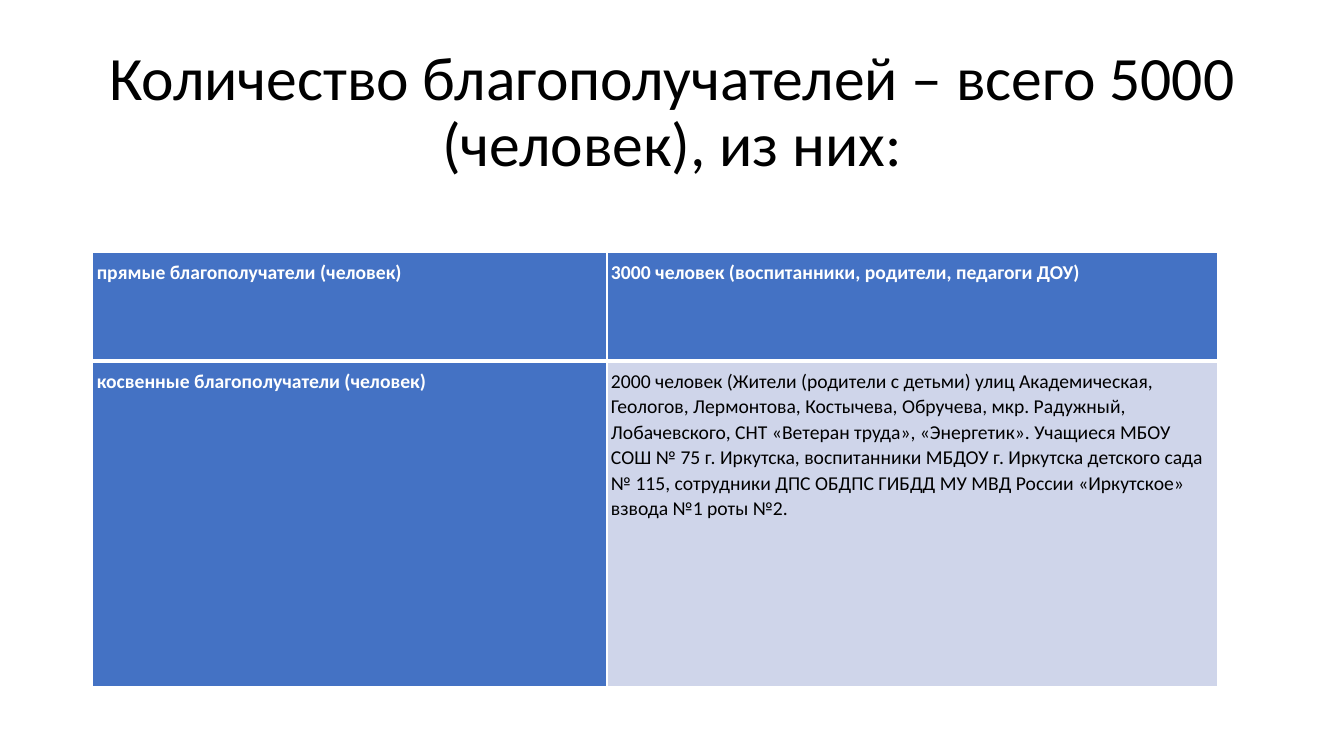
from lxml import etree
from pptx import Presentation
from pptx.dml.color import RGBColor
from pptx.enum.text import MSO_ANCHOR, MSO_AUTO_SIZE, PP_ALIGN
from pptx.oxml.ns import qn
from pptx.util import Inches, Pt

CENTER, LEFT = PP_ALIGN.CENTER, PP_ALIGN.LEFT
MIDDLE, TOP = MSO_ANCHOR.MIDDLE, MSO_ANCHOR.TOP
NO_AUTOFIT = MSO_AUTO_SIZE.NONE
WHITE, BLACK, BLUE, PALE = "FFFFFF", "000000", "4472C4", "CFD5EA"


def write(tf, text, color, paragraph, font):
    """Put one formatted run into a text frame."""
    tf.word_wrap = True
    p = tf.paragraphs[0]
    r = p.add_run()
    r.text = text
    r.font.name = "Calibri"
    r.font.color.rgb = RGBColor.from_string(color)
    for name, value in paragraph.items():
        setattr(p, name, value)
    for name, value in font.items():
        setattr(r.font, name, value)


def add_border(cell, side, width):
    """Draw one white cell border."""
    ln = etree.SubElement(cell._tc.get_or_add_tcPr(), qn(f"a:ln{side}"), w=str(Pt(width)))
    fill = etree.SubElement(ln, qn("a:solidFill"))
    etree.SubElement(fill, qn("a:srgbClr"), val=WHITE)


prs = Presentation()
prs.slide_width, prs.slide_height = Inches(13.33), Inches(7.5)
s = prs.slides.add_slide(prs.slide_layouts[5])

# Title
title = s.shapes.title
title.left, title.top = Inches(0.92), Inches(0.4)
title.width, title.height = Inches(11.5), Inches(1.45)
tf = title.text_frame
tf.auto_size = NO_AUTOFIT
tf.vertical_anchor = MIDDLE
write(tf, "Количество благополучателей – всего 5000 (человек), из них:", BLACK,
      {"alignment": CENTER, "line_spacing": 0.9}, {"size": Pt(44)})

# Table of direct and indirect beneficiaries
rows = [
    ("прямые благополучатели (человек)",
     "3000 человек (воспитанники, родители, педагоги ДОУ)"),
    ("косвенные благополучатели (человек)",
     "2000 человек (Жители (родители с детьми) улиц Академическая, Геологов, "
     "Лермонтова, Костычева, Обручева, мкр. Радужный, Лобачевского, "
     "СНТ «Ветеран труда», «Энергетик». Учащиеся МБОУ СОШ № 75 г. Иркутска, "
     "воспитанники МБДОУ г. Иркутска детского сада № 115, сотрудники ДПС ОБДПС "
     "ГИБДД МУ МВД России «Иркутское» взвода №1 роты №2."),
]
col_widths, row_heights = (5.1, 6.06), (1.08, 3.23)
table = s.shapes.add_table(2, 2, Inches(0.92), Inches(2.5),
                           Inches(sum(col_widths)), Inches(sum(row_heights))).table
for column, width in zip(table.columns, col_widths):
    column.width = Inches(width)
for row, height in zip(table.rows, row_heights):
    row.height = Inches(height)

cell_format = {"margin_left": Inches(0.04), "margin_right": Inches(0.04),
               "margin_top": Inches(0.07), "margin_bottom": Inches(0.07),
               "vertical_anchor": TOP}
cell_paragraph = {"alignment": LEFT, "line_spacing": 1.07, "space_after": Pt(8)}
for i, texts in enumerate(rows):
    for j, text in enumerate(texts):
        cell = table.cell(i, j)
        is_header = i == 0 or j == 0
        for name, value in cell_format.items():
            setattr(cell, name, value)
        # The line between the two rows is thicker
        top, bottom = (1, 3) if i == 0 else (3, 1)
        for side, width in (("L", 1), ("R", 1), ("T", top), ("B", bottom)):
            add_border(cell, side, width)
        cell.fill.solid()
        cell.fill.fore_color.rgb = RGBColor.from_string(BLUE if is_header else PALE)
        write(cell.text_frame, text, WHITE if is_header else BLACK, cell_paragraph,
              {"size": Pt(14), "bold": is_header})

prs.save("out.pptx")
